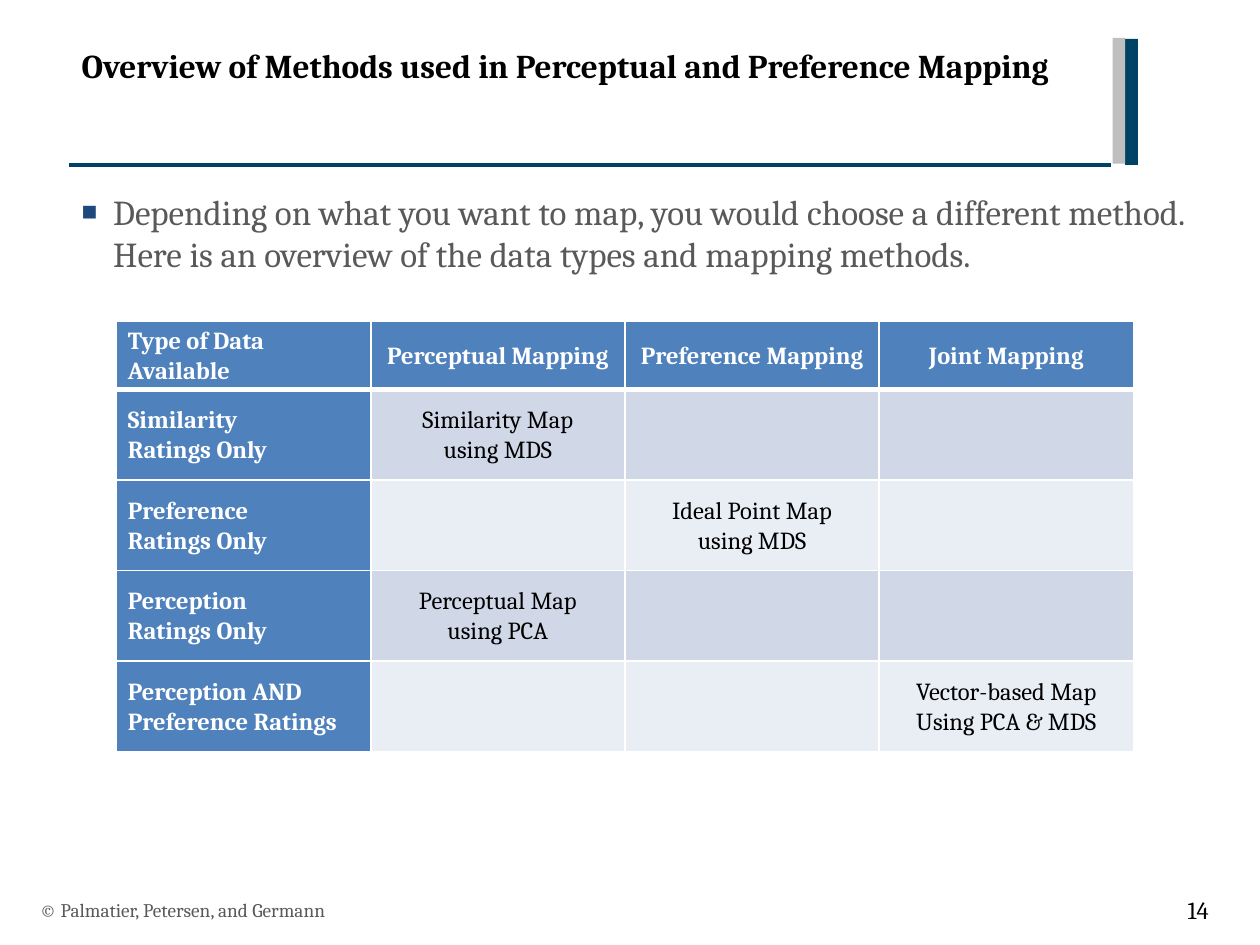
from dataclasses import dataclass

from lxml.etree import SubElement
from pptx import Presentation
from pptx.dml.color import RGBColor
from pptx.enum.shapes import MSO_CONNECTOR as Connector, MSO_SHAPE as Shape
from pptx.enum.text import MSO_ANCHOR as Anchor, PP_ALIGN as Align
from pptx.oxml import parse_xml
from pptx.oxml.ns import nsdecls, qn
from pptx.util import Pt

FONT = "Cambria"
COLORS = {
    "navy": "004264",
    "silver": "BFBFBF",
    "black": "000000",
    "gray": "595959",
    "bullet": "1F497D",
    "white": "FFFFFF",
    "header": "4F81BD",
    "odd": "D0D8E8",
    "even": "E9EDF4",
}
ROWS = [
    ["Type of Data Available", "Perceptual Mapping", "Preference Mapping", "Joint Mapping"],
    ["Similarity\nRatings Only", "Similarity Map\nusing MDS", "", ""],
    ["Preference\nRatings Only", "", "Ideal Point Map\nusing MDS", ""],
    ["Perception\nRatings Only", "Perceptual Map\nusing PCA", "", ""],
    ["Perception AND\nPreference Ratings", "", "", "Vector-based Map\nUsing PCA & MDS"],
]
COLUMN_WIDTH = 145.3
HEADER_HEIGHT = 38.9
ROW_HEIGHT = 51.7


@dataclass
class Bar:
    left: float
    top: float
    color: str


@dataclass
class Label:
    left: float
    top: float
    width: float
    height: float
    text: str
    size: float
    color: str
    bold: bool = False
    align: Align = Align.LEFT
    anchor: Anchor = Anchor.TOP
    bullet: bool = False


BARS = [Bar(643, 22.3, "navy"), Bar(635.8, 21.6, "silver")]
LABELS = [
    Label(39.6, 22.3, 594.7, 63.4,
          "Overview of Methods used in Perceptual and Preference Mapping",
          19, "black", bold=True),
    Label(39.6, 105.1, 658.1, 389.5,
          "Depending on what you want to map, you would choose a different method. "
          "Here is an overview of the data types and mapping methods.",
          20, "gray", bullet=True),
    Label(15.8, 505.4, 482.4, 28.8, "© Palmatier, Petersen, and Germann",
          11, "gray", anchor=Anchor.MIDDLE),
    Label(653.8, 505.4, 43.9, 28.8, "14", 14, "black",
          align=Align.RIGHT, anchor=Anchor.MIDDLE),
]


def rgb(name: str) -> RGBColor:
    return RGBColor.from_string(COLORS[name])


def format_spans(para, size: float, color: str, bold: bool) -> None:
    for span in para.runs:
        span.font.name = FONT
        span.font.size = Pt(size)
        span.font.bold = bold
        span.font.color.rgb = rgb(color)


def add_bullet(para) -> None:
    properties = para._p.get_or_add_pPr()
    properties.set("marL", str(Pt(18)))
    properties.set("indent", str(-Pt(18)))
    color = SubElement(properties, qn("a:buClr"))
    SubElement(color, qn("a:srgbClr"), val=COLORS["bullet"])
    SubElement(properties, qn("a:buSzPct"), val="75000")
    SubElement(properties, qn("a:buFont"), typeface="Arial")
    SubElement(properties, qn("a:buChar"), char="■")


def add_label(page, label: Label) -> None:
    box = page.shapes.add_textbox(
        Pt(label.left), Pt(label.top), Pt(label.width), Pt(label.height))
    frame = box.text_frame
    frame.word_wrap = True
    frame.vertical_anchor = label.anchor
    frame.text = label.text
    para = frame.paragraphs[0]
    para.alignment = label.align
    if label.bullet:
        add_bullet(para)
    format_spans(para, label.size, label.color, label.bold)


def add_bar(page, bar: Bar) -> None:
    shape = page.shapes.add_shape(
        Shape.RECTANGLE, Pt(bar.left), Pt(bar.top), Pt(7.2), Pt(72))
    shape.shadow.inherit = False
    shape.fill.solid()
    shape.fill.fore_color.rgb = rgb(bar.color)
    shape.line.fill.background()


def add_rule(page) -> None:
    rule = page.shapes.add_connector(
        Connector.STRAIGHT, Pt(39.6), Pt(94.3), Pt(635), Pt(94.3))
    rule.line.color.rgb = rgb("navy")
    rule.line.width = Pt(2)
    SubElement(rule._element.spPr, qn("a:effectLst"))


def add_borders(cell, top: float, bottom: float) -> None:
    properties = cell._tc.get_or_add_tcPr()
    widths = {"lnL": 1, "lnR": 1, "lnT": top, "lnB": bottom}
    for index, (side, width) in enumerate(widths.items()):
        properties.insert(index, parse_xml(
            f'<a:{side} {nsdecls("a")} w="{Pt(width)}"><a:solidFill>'
            f'<a:srgbClr val="{COLORS["white"]}"/></a:solidFill></a:{side}>'))


def fill_cell(cell, text: str, row: int, column: int) -> None:
    heading = row == 0 or column == 0
    cell.fill.solid()
    cell.fill.fore_color.rgb = rgb("header" if heading else "odd" if row % 2 else "even")
    cell.vertical_anchor = Anchor.MIDDLE
    cell.margin_left = cell.margin_right = Pt(6.5)
    cell.margin_top = cell.margin_bottom = Pt(0)
    add_borders(cell, top=3 if row == 1 else 1, bottom=3 if row == 0 else 1)
    if text:
        para = cell.text_frame.paragraphs[0]
        para.text = text
        para.alignment = Align.CENTER if column else Align.LEFT
        para.line_spacing = 1.07
        format_spans(para, 14, "white" if heading else "black", heading)


def add_methods_table(page) -> None:
    row_count, column_count = len(ROWS), len(ROWS[0])
    height = HEADER_HEIGHT + ROW_HEIGHT * (row_count - 1)
    table = page.shapes.add_table(
        row_count, column_count, Pt(66.6), Pt(183.8),
        Pt(COLUMN_WIDTH * column_count), Pt(height)).table
    for column in table.columns:
        column.width = Pt(COLUMN_WIDTH)
    for row, texts in enumerate(ROWS):
        table.rows[row].height = Pt(ROW_HEIGHT if row else HEADER_HEIGHT)
        for column, text in enumerate(texts):
            fill_cell(table.cell(row, column), text, row, column)


def main() -> None:
    """Build the slide that compares perceptual and preference mapping methods."""
    deck = Presentation()
    deck.slide_width, deck.slide_height = Pt(720), Pt(540)
    page = deck.slides.add_slide(deck.slide_layouts[6])
    add_rule(page)
    for bar in BARS:
        add_bar(page, bar)
    for label in LABELS:
        add_label(page, label)
    add_methods_table(page)
    deck.save("out.pptx")


if __name__ == "__main__":
    main()
